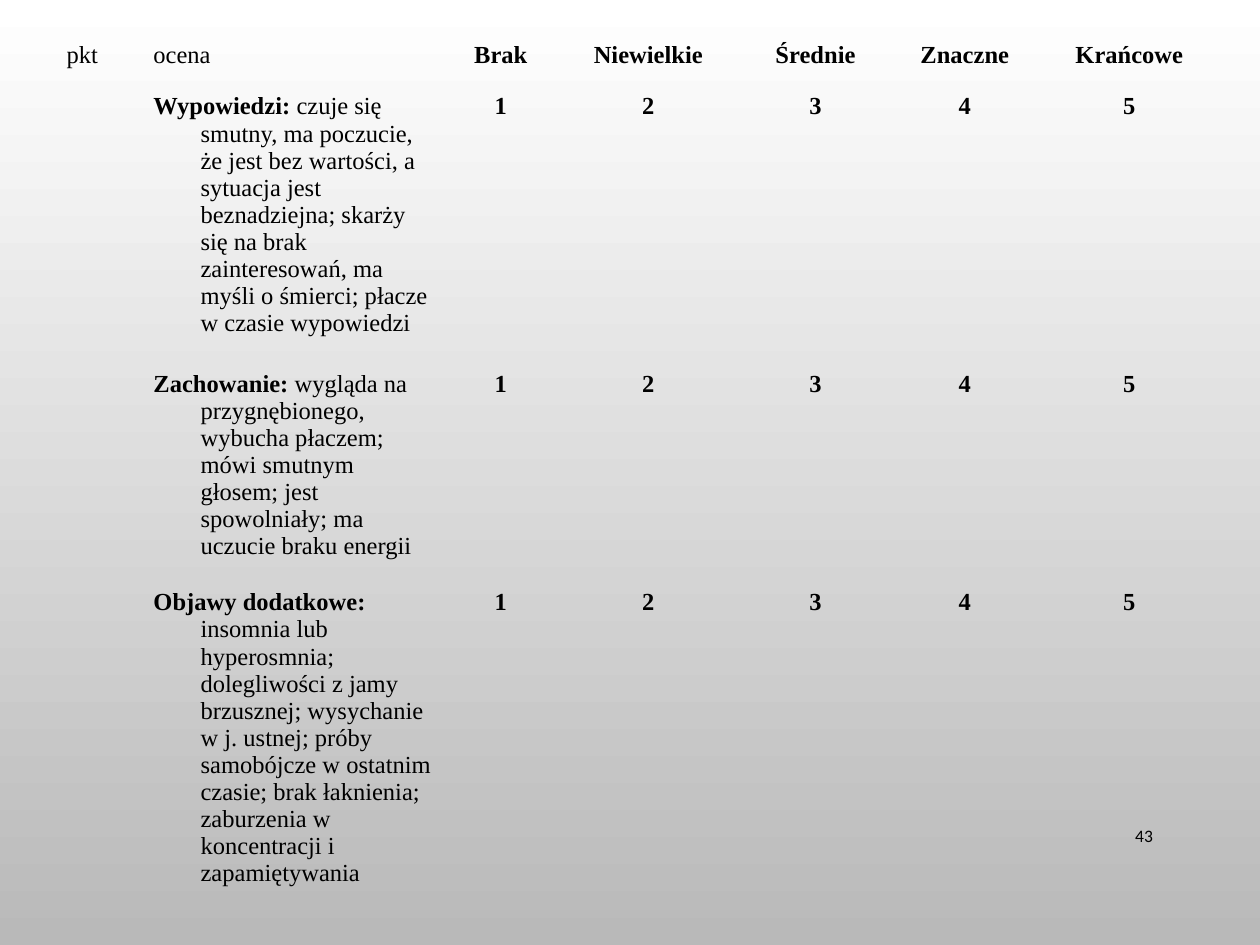
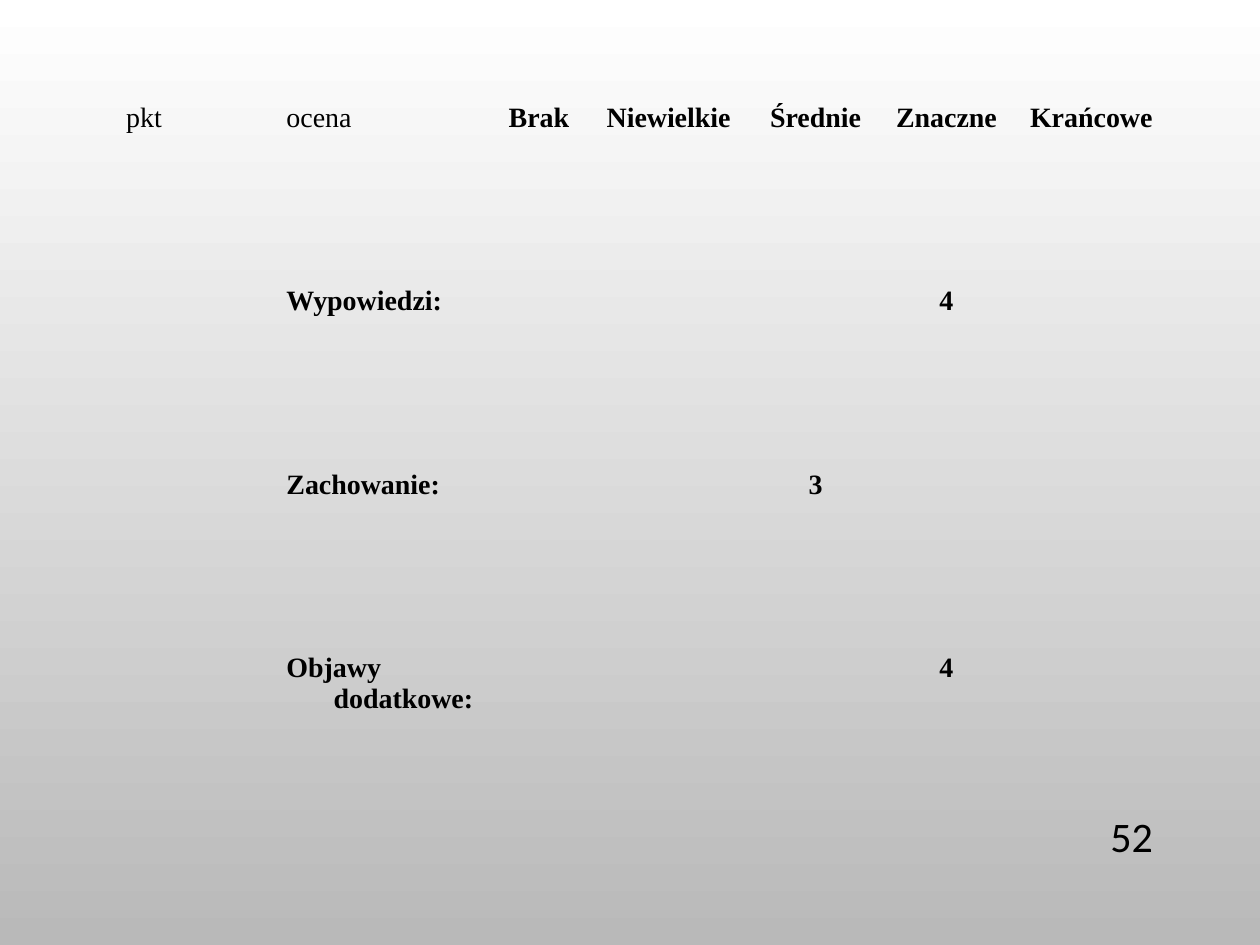
from dataclasses import dataclass

from pptx import Presentation
from pptx.dml.color import RGBColor
from pptx.enum.text import MSO_ANCHOR, PP_ALIGN
from pptx.util import Cm, Pt

LEFT, CENTER, RIGHT = PP_ALIGN.LEFT, PP_ALIGN.CENTER, PP_ALIGN.RIGHT
MIDDLE = MSO_ANCHOR.MIDDLE
NO_STYLE_NO_GRID = "{2D5ABB26-0587-4C30-8999-92F81FD0307C}"


@dataclass(frozen=True)
class Theme:
    text: RGBColor = RGBColor(0x00, 0x00, 0x00)
    bg_top: RGBColor = RGBColor(0xFF, 0xFF, 0xFF)
    bg_bottom: RGBColor = RGBColor(0xB9, 0xB9, 0xB9)
    table_font: str = "Times New Roman"
    number_font: str = "Calibri"
    scale_size: int = 14
    result_size: int = 16
    small_number: int = 10
    large_number: int = 24
    hanging: float = 0.95


class Deck:
    def __init__(self, theme):
        self.theme = theme
        self.prs = Presentation()
        self.prs.slide_width, self.prs.slide_height = Cm(25.4), Cm(19.05)
        self.slide = None

    def add_slide(self):
        self.slide = self.prs.slides.add_slide(self.prs.slide_layouts[6])
        fill = self.slide.background.fill
        fill.gradient()
        fill.gradient_angle = 270
        colors = (self.theme.bg_top, self.theme.bg_bottom)
        for stop, color in zip(fill.gradient_stops, colors):
            stop.color.rgb = color

    def add_run(self, p, text, font, size, bold=False):
        r = p.add_run()
        r.text = text
        r.font.name, r.font.size, r.font.bold = font, Pt(size), bold
        r.font.color.rgb = self.theme.text

    def add_number(self, number, size):
        box = self.slide.shapes.add_textbox(Cm(21.89), Cm(16.33), Cm(1.6), Cm(1.02))
        tf = box.text_frame
        tf.word_wrap = True
        tf.vertical_anchor = MIDDLE
        p = tf.paragraphs[0]
        p.alignment = RIGHT
        self.add_run(p, str(number), self.theme.number_font, size)

    def fill_cell(self, cell, runs, align, size):
        """Write (text, bold) runs as one hanging paragraph."""
        cell.fill.background()
        if not runs:
            return
        p = cell.text_frame.paragraphs[0]
        p.alignment = align
        indent = Cm(self.theme.hanging)
        pPr = p._p.get_or_add_pPr()
        pPr.set("marL", str(indent))
        pPr.set("indent", str(-indent))
        for text, bold in runs:
            self.add_run(p, text, self.theme.table_font, size, bold)

    def add_table(self, left, top, widths, heights, rows, size):
        frame = self.slide.shapes.add_table(
            len(heights), len(widths), Cm(left), Cm(top),
            Cm(sum(widths)), Cm(sum(heights)))
        table = frame.table
        table.first_row = table.horz_banding = False
        table._tbl.tblPr[0].text = NO_STYLE_NO_GRID
        for column, width in zip(table.columns, widths):
            column.width = Cm(width)
        for row, height, contents in zip(table.rows, heights, rows):
            row.height = Cm(height)
            for i, (cell, runs) in enumerate(zip(row.cells, contents)):
                self.fill_cell(cell, runs, LEFT if i < 2 else CENTER, size)


GRADES = ["Brak", "Niewielkie", "Średnie", "Znaczne", "Krańcowe"]
HEADER = [[("pkt", False)], [("ocena", False)]] + [[(g, True)] for g in GRADES]

# area: (description, points given in the example)
AREAS = {
    "Wypowiedzi:": (
        " czuje się smutny, ma poczucie, że jest bez wartości, a sytuacja jest "
        "beznadziejna; skarży się na brak zainteresowań, ma myśli o śmierci; "
        "płacze w czasie wypowiedzi", 4),
    "Zachowanie:": (
        " wygląda na przygnębionego, wybucha płaczem; mówi smutnym głosem; "
        "jest spowolniały; ma uczucie braku energii", 3),
    "Objawy dodatkowe:": (
        " insomnia lub hyperosmnia; dolegliwości z jamy brzusznej; wysychanie "
        "w j. ustnej; próby samobójcze w ostatnim czasie; brak łaknienia; "
        "zaburzenia w koncentracji i zapamiętywania", 4),
}


def point_cells(shown):
    """One cell per grade, with its points only if they are in shown."""
    return [[(str(n), True)] if n in shown else []
            for n in range(1, len(GRADES) + 1)]


def build_scale(deck):
    theme = deck.theme
    deck.add_slide()
    deck.add_number(43, theme.small_number)
    rows = [HEADER] + [
        [[], [(area, True), (description, False)]] + point_cells(range(1, 6))
        for area, (description, _) in AREAS.items()]
    deck.add_table(1.09, 0.71, [1.75, 6.2, 2.11, 3.84, 2.9, 3.12, 3.51],
                   [1.04, 5.38, 3.94, 6.83], rows, theme.scale_size)


def build_result(deck):
    theme = deck.theme
    deck.add_slide()
    deck.add_number(52, theme.large_number)
    rows = [HEADER] + [
        [[], [(area, True)]] + point_cells([points])
        for area, (_, points) in AREAS.items()]
    deck.add_table(2.29, 1.93, [3.23, 4.42, 1.85, 3.38, 2.54, 2.74, 3.1],
                   [3.7] * 4, rows, theme.result_size)


def main():
    deck = Deck(Theme())
    build_scale(deck)
    build_result(deck)
    deck.prs.save("out.pptx")


if __name__ == "__main__":
    main()
